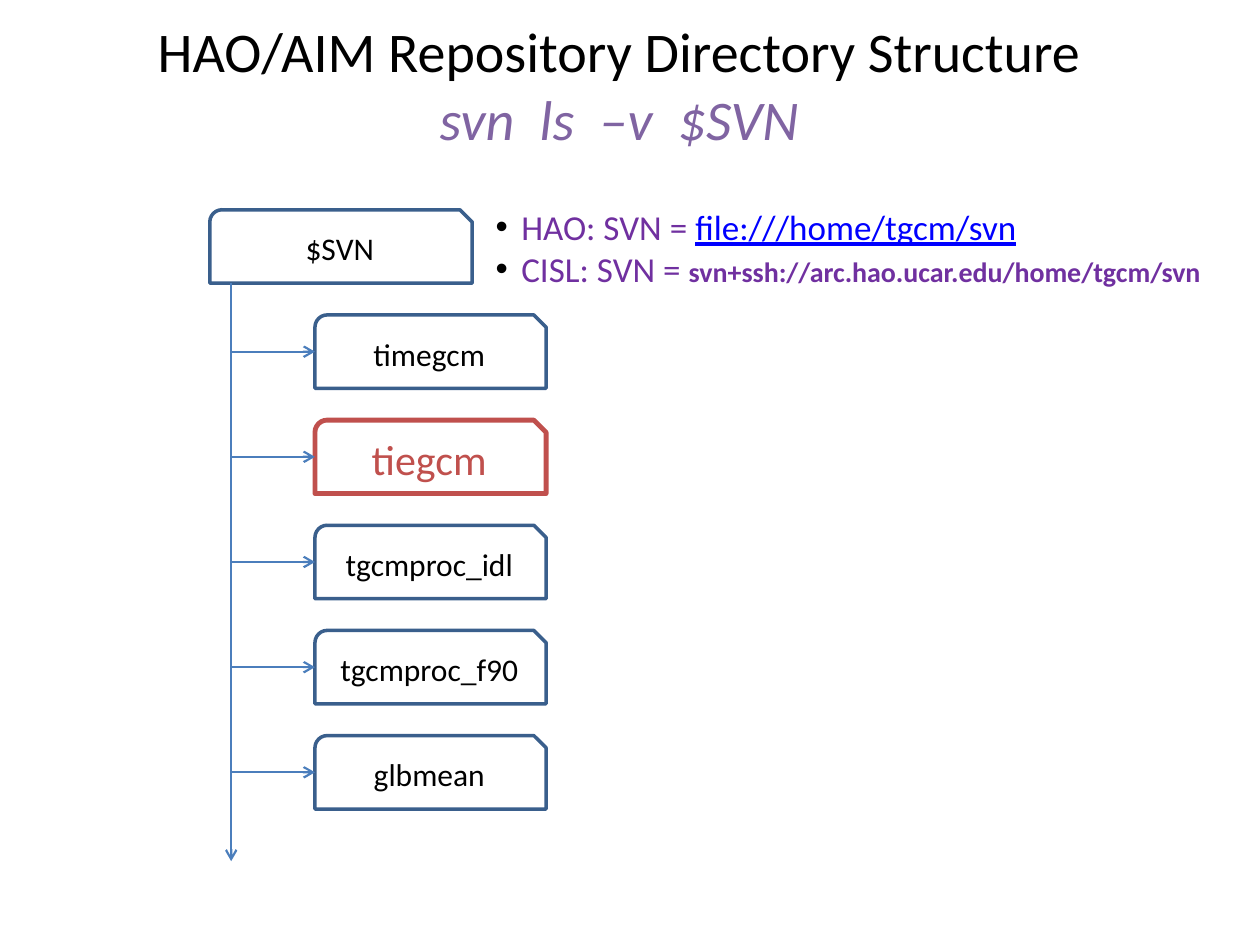
from dataclasses import dataclass

from lxml.etree import SubElement
from pptx import Presentation
from pptx.dml.color import RGBColor as RGB
from pptx.enum.shapes import MSO_CONNECTOR as CONN, MSO_SHAPE as SHAPE
from pptx.enum.text import MSO_ANCHOR as ANCHOR, PP_ALIGN as ALIGN
from pptx.oxml.ns import qn
from pptx.util import Cm, Pt


@dataclass(frozen=True)
class Theme:
    font: str = "Calibri"
    text: str = "000000"
    command: str = "8064A2"
    note: str = "7030A0"
    link: str = "0000FF"
    border: str = "3A5F8C"
    arrow: str = "4B7EBC"
    accent: str = "C0504D"
    title_size: int = 32
    accent_size: int = 24
    note_size: int = 20
    body_size: int = 18
    url_size: int = 16


class Diagram:
    def __init__(self, prs, theme):
        self.theme = theme
        self.slide = prs.slides.add_slide(prs.slide_layouts[5])

    def style(self, r, size, color, bold=False, italic=False, underline=False):
        f = r.font
        f.name, f.size, f.color.rgb = self.theme.font, Pt(size), RGB.from_string(color)
        f.bold, f.italic, f.underline = bold, italic, underline

    def add_run(self, p, text, size, color, **kw):
        r = p.add_run()
        r.text = text
        self.style(r, size, color, **kw)

    def title(self, heading, command, x, y, w, h):
        t = self.theme
        sp = self.slide.shapes.title
        sp.left, sp.top, sp.width, sp.height = Cm(x), Cm(y), Cm(w), Cm(h)
        tf = sp.text_frame
        tf.vertical_anchor = ANCHOR.MIDDLE
        p = tf.paragraphs[0]
        p.alignment = ALIGN.CENTER
        self.add_run(p, heading, t.title_size, t.text)
        p.add_line_break()
        self.add_run(p, command, t.title_size, t.command, italic=True)

    def folder(self, name, x, y, w, h, highlight=False):
        t = self.theme
        sp = self.slide.shapes.add_shape(
            SHAPE.SNIP_ROUND_RECTANGLE, Cm(x), Cm(y), Cm(w), Cm(h))
        sp.shadow.inherit = False
        sp.fill.background()
        sp.line.color.rgb = RGB.from_string(t.accent if highlight else t.border)
        sp.line.width = Pt(2.75 if highlight else 2)
        tf = sp.text_frame
        tf.text = name
        tf.vertical_anchor = ANCHOR.MIDDLE
        p = tf.paragraphs[0]
        p.alignment = ALIGN.CENTER
        size, color = (t.accent_size, t.accent) if highlight else (t.body_size, t.text)
        self.style(p.runs[0], size, color)

    def arrow(self, x1, y1, x2, y2):
        kind = CONN.STRAIGHT if x1 == x2 else CONN.ELBOW
        c = self.slide.shapes.add_connector(kind, Cm(x1), Cm(y1), Cm(x2), Cm(y2))
        c.line.color.rgb = RGB.from_string(self.theme.arrow)
        c.line.width = Pt(1.25)
        SubElement(c.line._get_or_add_ln(), qn("a:tailEnd"), type="arrow")
        spPr = c._element.spPr
        SubElement(spPr, qn("a:effectLst"))
        if kind == CONN.ELBOW:
            av = spPr.find(qn("a:prstGeom")).find(qn("a:avLst"))
            SubElement(av, qn("a:gd"), name="adj1", fmla="val 0")

    def bullets(self, items, x, y, w, h):
        t = self.theme
        tf = self.slide.shapes.add_textbox(Cm(x), Cm(y), Cm(w), Cm(h)).text_frame
        tf.word_wrap = True
        for i, (label, url, url_style) in enumerate(items):
            p = tf.add_paragraph() if i else tf.paragraphs[0]
            pPr = p._p.get_or_add_pPr()
            pPr.set("marL", str(Cm(0.52)))
            pPr.set("indent", str(-Cm(0.52)))
            color = SubElement(pPr, qn("a:buClr"))
            SubElement(color, qn("a:srgbClr"), val=t.text)
            SubElement(pPr, qn("a:buFont"), typeface="Arial")
            SubElement(pPr, qn("a:buChar"), char="•")
            self.add_run(p, label, t.note_size, t.note)
            self.add_run(p, url, **url_style)


def main():
    theme = Theme()
    prs = Presentation()
    prs.slide_width, prs.slide_height = Cm(25.4), Cm(19.05)
    d = Diagram(prs, theme)
    d.title("HAO/AIM Repository Directory Structure", "svn  ls  –v  $SVN",
            2.75, 0, 19.47, 3.39)

    root_x, root_y, box_h = 4.23, 4.23, 1.48
    trunk_x, trunk_y, trunk_end = 4.66, root_y + box_h, 17.36
    child_x, child_y, pitch = 6.35, 6.35, 2.12
    d.folder("$SVN", root_x, root_y, 5.29, box_h)
    d.arrow(trunk_x, trunk_y, trunk_x, trunk_end)
    names = ["timegcm", "tiegcm", "tgcmproc_idl", "tgcmproc_f90", "glbmean"]
    for i, name in enumerate(names):
        y = child_y + i * pitch
        d.folder(name, child_x, y, 4.66, box_h, highlight=name == "tiegcm")
        d.arrow(trunk_x, trunk_y, child_x, y + box_h / 2)

    link = dict(size=theme.note_size, color=theme.link, underline=True)
    address = dict(size=theme.url_size, color=theme.note, bold=True)
    d.bullets([
        ("HAO: SVN = ", "file:///home/tgcm/svn", link),
        ("CISL: SVN = ", "svn+ssh://arc.hao.ucar.edu/home/tgcm/svn", address),
    ], 9.74, 4.02, 15.66, 1.96)
    prs.save("out.pptx")


if __name__ == "__main__":
    main()
